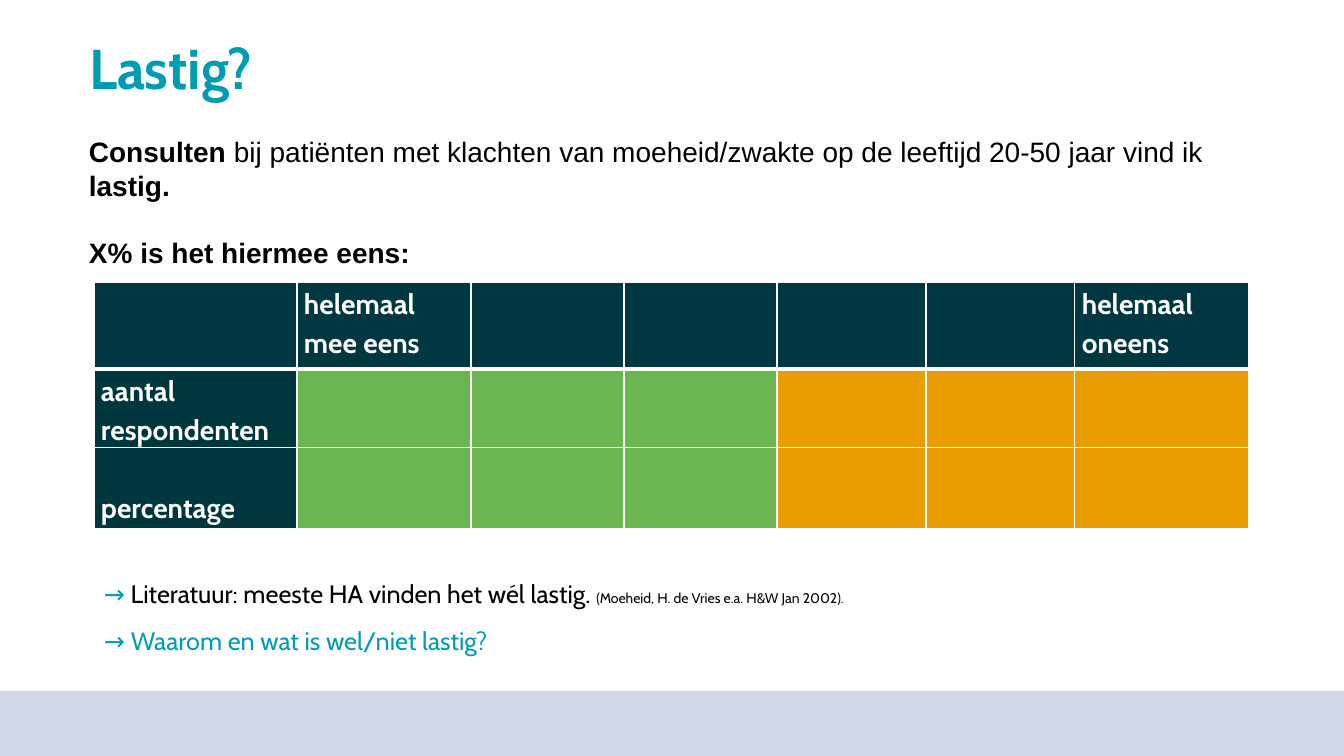
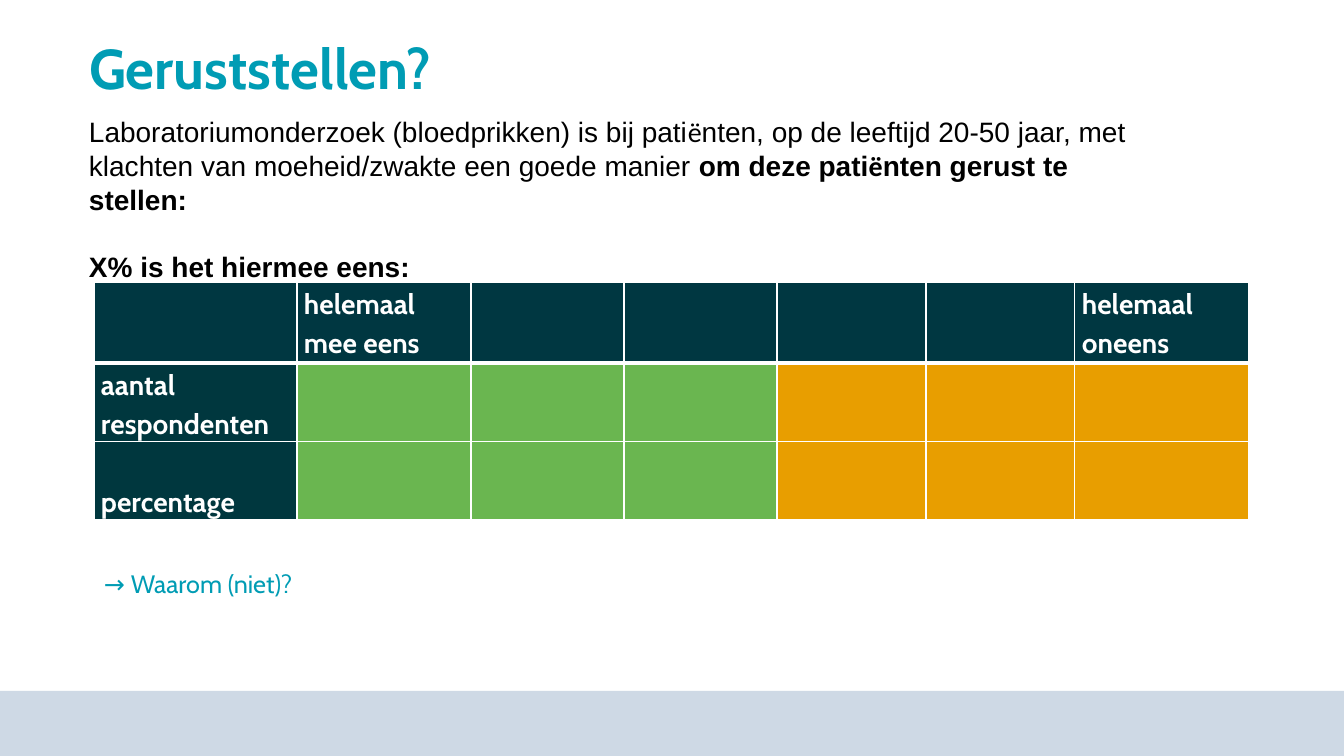
from lxml import etree
from pptx import Presentation
from pptx import util as u
from pptx.dml.color import RGBColor
from pptx.enum import shapes, text
from pptx.oxml.ns import qn

HUES = {"teal": "009CB4", "band": "CED9E5", "head": "003741", "side": "00373E",
        "green": "6AB650", "amber": "E89E00", "black": "000000", "white": "FFFFFF"}
WIDE, HIGH = 1344, 756
COLS = [203, 174, 153, 153, 149, 149, 174]
LINE = 39  # one line of table text


def px(n):
    return u.Emu(round(n * 12192000 / WIDE))


def hue(name):
    return RGBColor.from_string(HUES[name])


def put(par, words, size=20, font="Arial", color="black", bold=False):
    """Add one formatted run to a paragraph."""
    run = par.add_run()
    run.text = words
    run.font.size, run.font.name, run.font.bold = u.Pt(size), font, bold
    run.font.color.rgb = hue(color)


def edge(cell, side, width):
    """Draw a white line on one side of a cell."""
    line = etree.Element(qn("a:ln" + side), w=str(u.Pt(width)))
    fill = etree.SubElement(line, qn("a:solidFill"))
    etree.SubElement(fill, qn("a:srgbClr"), val=HUES["white"])
    return line


class Deck:
    def __init__(self):
        self.prs = Presentation()
        self.prs.slide_width, self.prs.slide_height = px(WIDE), px(HIGH)
        self.slide = None

    def start(self, title):
        """New slide with its bottom band and title."""
        self.slide = self.prs.slides.add_slide(self.prs.slide_layouts[5])
        self.band()
        box = self.slide.shapes.title
        box.left, box.top, box.width, box.height = px(79), px(36), px(1080), px(72)
        frame = box.text_frame
        frame.auto_size = text.MSO_AUTO_SIZE.NONE
        frame.vertical_anchor = text.MSO_ANCHOR.TOP
        par = frame.paragraphs[0]
        par.alignment, par.line_spacing = text.PP_ALIGN.LEFT, 0.9
        put(par, title, size=40, font="Cabin", color="teal", bold=True)

    def band(self):
        bar = self.slide.shapes.add_shape(
            shapes.MSO_SHAPE.RECTANGLE, 0, px(691), px(WIDE), px(HIGH - 691))
        bar.shadow.inherit = False
        bar.fill.solid()
        bar.fill.fore_color.rgb = hue("band")
        bar.line.fill.background()

    def box(self, left, top, width, height, pars, gap, pitch=None, **base):
        """Text box; each paragraph is a list of (words, format) runs."""
        frame = self.slide.shapes.add_textbox(
            px(left), px(top), px(width), px(height)).text_frame
        frame.word_wrap = True
        for i, runs in enumerate(pars):
            par = frame.add_paragraph() if i else frame.paragraphs[0]
            if i:
                par.space_before = u.Pt(gap)
            if pitch:
                par.line_spacing = u.Pt(pitch)
            for words, fmt in runs:
                put(par, words, **{**base, **fmt})

    def claim(self, top, width, runs):
        """Statement above the table."""
        ask = [("X% is het hiermee eens:", {"bold": True})]
        self.box(79, top, width, 150, [runs, ask], gap=24, pitch=24)

    def notes(self, top, width, height, pars):
        """Arrow lines below the table."""
        self.box(94, top, width, height, pars, gap=12,
                 size=18, font="Cabin", color="teal")

    def table(self, rows):
        """Empty answer table with the given row heights."""
        grid = self.slide.shapes.add_table(
            len(rows), len(COLS), px(94), px(282), px(sum(COLS)), px(sum(rows))).table
        grid.first_row = grid.horz_banding = False
        for c, width in enumerate(COLS):
            grid.columns[c].width = px(width)
        labels = {(0, 1): ["helemaal mee eens"], (0, 6): ["helemaal oneens"],
                  (1, 0): ["aantal", "respondenten"], (2, 0): ["percentage"]}
        for r, height in enumerate(rows):
            grid.rows[r].height = px(height)
            for c in range(len(COLS)):
                tone = ("head" if r == 0 else "side" if c == 0
                        else "green" if c < 4 else "amber")
                self.cell(grid.cell(r, c), r, tone, labels.get((r, c), []))

    def cell(self, cell, row, tone, lines):
        cell.margin_left = cell.margin_right = px(7)
        cell.margin_top = px(LINE if row == 2 and lines else 0)
        cell.margin_bottom = 0
        for i, words in enumerate(lines):
            frame = cell.text_frame
            par = frame.add_paragraph() if i else frame.paragraphs[0]
            par.line_spacing = 1.15
            put(par, words, font="Cabin", color="white", bold=True)
        cell.fill.solid()
        cell.fill.fore_color.rgb = hue(tone)
        # Cell borders come before the fill; the header rule is heavier
        widths = {"L": 1, "R": 1, "T": 3 if row == 1 else 1, "B": 1 if row else 3}
        props = cell._tc.get_or_add_tcPr()
        for i, (side, width) in enumerate(widths.items()):
            props.insert(i, edge(cell, side, width))


def main():
    deck = Deck()
    bold, dots = {"bold": True}, {"font": "Calibri"}

    # Difficult consultations
    deck.start("Lastig?")
    deck.table([87, 78, 81])
    deck.claim(130, 1170, [
        ("Consulten", bold),
        (" bij patiënten met klachten van moeheid/zwakte op de leeftijd "
         "20-50 jaar vind ik ", {}),
        ("lastig.", bold)])
    deck.notes(573, 1241, 89, [
        [("→", {}),
         (" Literatuur: meeste HA vinden het wél lastig. ", {"color": "black"}),
         ("(Moeheid, H. de Vries e.a. H&W Jan 2002).", {"color": "black", "size": 10})],
        [("→ Waarom en wat is wel/niet lastig?", {})]])

    # Reassuring patients
    deck.start("Geruststellen?")
    deck.table([81, 78, 78])
    deck.claim(110, 1104, [
        ("Laboratoriumonderzoek (bloedprikken) is bij pati", {}),
        ("ë", dots),
        ("nten, op de leeftijd 20-50 jaar, met klachten van moeheid/zwakte "
         "een goede manier ", {}),
        ("om deze pati", bold),
        ("ë", {**bold, **dots}),
        ("nten gerust te stellen:", bold)])
    deck.notes(563, 1111, 40, [[("→ Waarom (niet)?", {})]])

    deck.prs.save("out.pptx")


if __name__ == "__main__":
    main()
